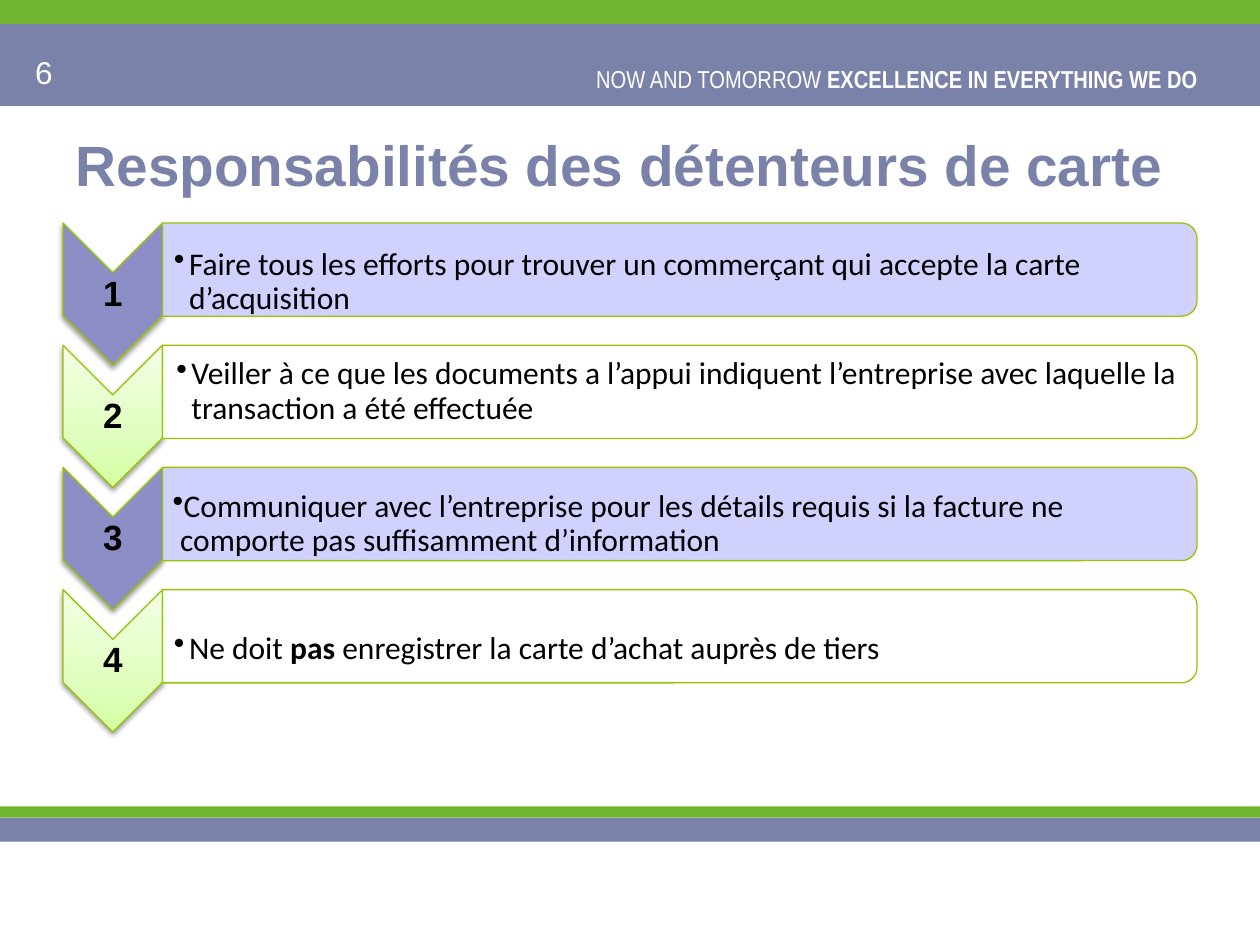
from lxml.etree import SubElement as Sub
from pptx import Presentation
from pptx.dml.color import RGBColor as RGB
from pptx.enum.shapes import MSO_SHAPE as Shape
from pptx.enum.text import MSO_ANCHOR as Anchor, PP_ALIGN as Align
from pptx.oxml.ns import qn
from pptx.util import Inches, Pt

HEX = {"slate": "7A82AA", "green": "73B632", "white": "FFFFFF", "black": "000000",
       "edge": "94C600", "violet": "8D8EC5", "lilac": "CDCDFF"}
FADE = [(0, "D5FFA2"), (35, "E0FFBE"), (100, "F3FFE6")]

TITLE = "Responsabilités des détenteurs de carte"
MOTTO = [("NOW AND TOMORROW ", False), ("EXCELLENCE IN EVERYTHING WE DO ", True)]
PAGE = "6"
BANDS = [(0.19, 0.65, "slate"), (0, 0.19, "green"),
         (6.49, 0.19, "slate"), (6.4, 0.09, "green")]
# runs (text, bold), text drop, left inset, hanging indent
STEPS = [
    ([("Faire tous les efforts pour trouver un commerçant qui accepte "
       "la carte d’acquisition", False)], 0.1, 0.09, 0.12),
    ([("Veiller à ce que les documents a l’appui indiquent l’entreprise "
       "avec laquelle la transaction a été effectuée", False)], 0, 0.11, 0.12),
    ([("Communiquer avec l’entreprise pour les détails requis si la facture "
       "ne comporte pas suffisamment d’information", False)], 0.08, 0.08, 0.06),
    ([("Ne doit ", False), ("pas", True),
      (" enregistrer la carte d’achat auprès de tiers", False)], 0.1, 0.09, 0.12),
]
LEFT, TOP, PITCH = 0.5, 1.77, 0.97
ARROW_W, ARROW_H = 0.79, 1.13
BAR_W, BAR_H = 8.21, 0.74


def color(name):
    return RGB.from_string(HEX[name])


def add_runs(para, runs, size, face, ink):
    for text, bold in runs:
        run = para.add_run()
        run.text = text
        font = run.font
        font.size, font.name, font.bold = Pt(size), face, bold
        font.color.rgb = color(ink)


def add_text(slide, box, runs, size, face, ink, align=Align.LEFT,
             pads=(0.1, 0.05, 0.1, 0.05), anchor=Anchor.TOP, hang=0, space=1):
    frame = slide.shapes.add_textbox(*map(Inches, box)).text_frame
    frame.word_wrap = True
    frame.vertical_anchor = anchor
    (frame.margin_left, frame.margin_top,
     frame.margin_right, frame.margin_bottom) = map(Inches, pads)
    para = frame.paragraphs[0]
    para.alignment, para.line_spacing = align, space
    if hang:
        props = para._p.get_or_add_pPr()
        props.set("marL", str(Inches(hang)))
        props.set("indent", str(-Inches(hang)))
        Sub(props, qn("a:buChar"), char="•")
    add_runs(para, runs, size, face, ink)


def add_block(slide, kind, box, fill, edge=None):
    block = slide.shapes.add_shape(kind, *map(Inches, box))
    block.shadow.inherit = False
    block.fill.solid()
    block.fill.fore_color.rgb = color(fill)
    if edge:
        block.line.color.rgb = color(edge)
        block.line.width = Pt(0.75)
    else:
        block.line.fill.background()
    return block


def add_turned(slide, kind, box, fill):
    """Add a shape turned by 90 degrees that covers box once turned."""
    x, y, w, h = box
    shift = (w - h) / 2
    block = add_block(slide, kind, (x + shift, y - shift, h, w), fill, "edge")
    block.rotation = 90
    return block


def add_alpha(node, share):
    Sub(node, qn("a:alpha"), val=str(share * 1000))


def cast_shadow(block):
    effects = block._element.spPr.find(qn("a:effectLst"))
    shade = Sub(effects, qn("a:outerShdw"), blurRad=str(Pt(3.1)),
                dist=str(Pt(1.6)), dir="5400000", rotWithShape="0")
    add_alpha(Sub(shade, qn("a:srgbClr"), val=HEX["black"]), 38)


def fade_up(block):
    """Swap the plain fill for a gradient that lightens towards the top."""
    props = block._element.spPr
    plain = props.find(qn("a:solidFill"))
    grad = Sub(props, qn("a:gradFill"), rotWithShape="0")
    stops = Sub(grad, qn("a:gsLst"))
    for pos, tint in FADE:
        stop = Sub(stops, qn("a:gs"), pos=str(pos * 1000))
        Sub(stop, qn("a:srgbClr"), val=tint)
    Sub(grad, qn("a:lin"), ang="16200000", scaled="0")
    props.replace(plain, grad)


def add_step(slide, index, runs, drop, inset, hang):
    top = TOP + index * PITCH
    dark = index % 2 == 0
    arrow = add_turned(slide, Shape.CHEVRON, (LEFT, top, ARROW_W, ARROW_H), "violet")
    if not dark:
        fade_up(arrow)
    cast_shadow(arrow)
    add_text(slide, (LEFT, top + 0.4, ARROW_W, 0.34), [(str(index + 1), True)],
             20, "Arial", "black", Align.CENTER, (0.01,) * 4, Anchor.MIDDLE, space=0.9)

    bar_x = LEFT + ARROW_W
    bar = add_turned(slide, Shape.ROUND_2_SAME_RECTANGLE, (bar_x, top, BAR_W, BAR_H),
                     "lilac" if dark else "white")
    add_alpha(bar._element.spPr.find(qn("a:solidFill"))[0], 90)
    add_text(slide, (bar_x, top + 0.04 + drop, 8.17, 0.66), runs, 18, "Calibri", "black",
             pads=(inset, 0.01, 0.01, 0.01), anchor=Anchor.MIDDLE, hang=hang, space=0.9)


def main():
    deck = Presentation()
    deck.slide_width, deck.slide_height = Inches(10), Inches(7.5)
    slide = deck.slides.add_slide(deck.slide_layouts[5])

    for top, height, fill in BANDS:
        add_block(slide, Shape.RECTANGLE, (0, top, 10, height), fill)
    add_text(slide, (4.6, 0.46, 5.05, 0.34), MOTTO, 14, "Arial Narrow", "white", Align.RIGHT)
    add_text(slide, (0.18, 0.37, 2.33, 0.4), [(PAGE, False)], 18, "Arial", "white")

    title = slide.shapes.title
    title.left, title.top, title.width, title.height = map(Inches, (0.5, 0.99, 9, 0.62))
    title.text_frame.vertical_anchor = Anchor.MIDDLE
    para = title.text_frame.paragraphs[0]
    para.alignment = Align.LEFT
    add_runs(para, [(TITLE, True)], 32.4, "Arial", "slate")

    for index, step in enumerate(STEPS):
        add_step(slide, index, *step)
    deck.save("out.pptx")


if __name__ == "__main__":
    main()
